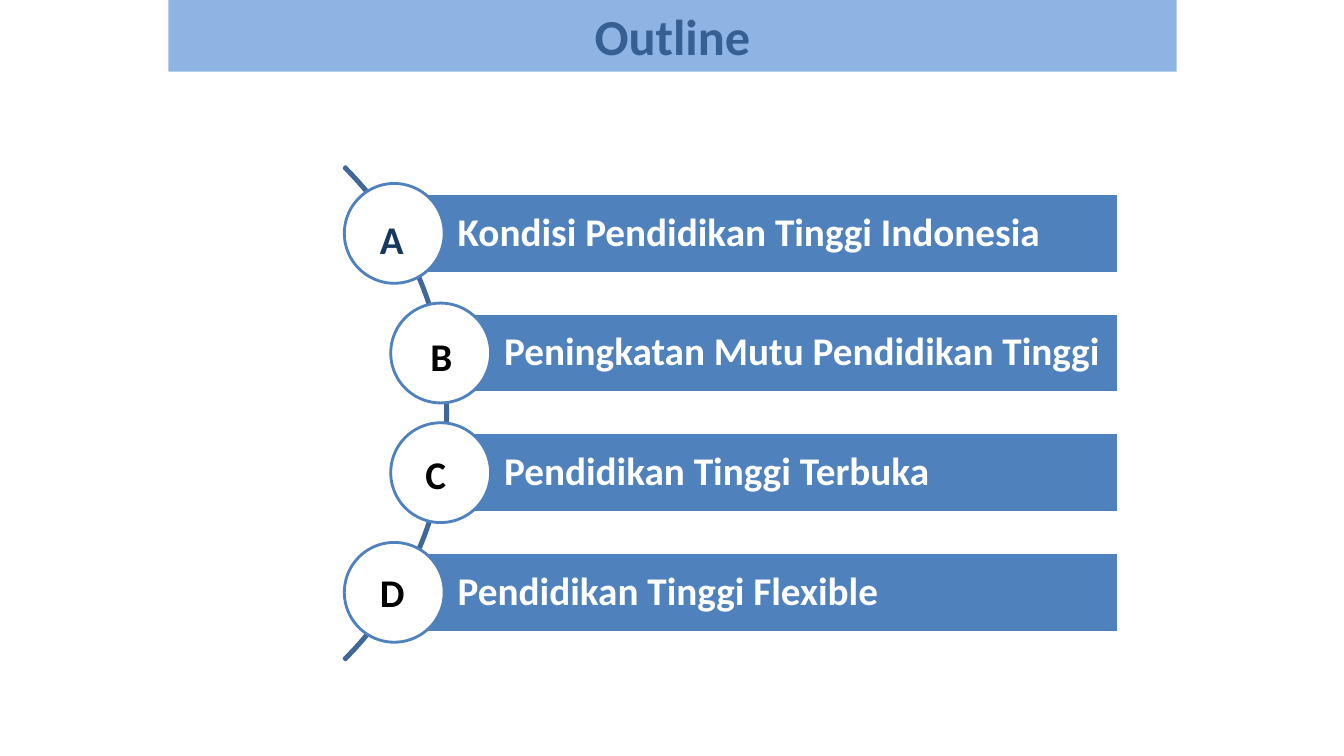
from pptx import Presentation
from pptx.dml.color import RGBColor
from pptx.enum.shapes import MSO_SHAPE as Preset
from pptx.enum.text import MSO_ANCHOR as Anchor, PP_ALIGN as Align
from pptx.util import Inches, Pt

COLORS = {
    "white": "FFFFFF",
    "black": "000000",
    "bar": "4F81BD",
    "arc": "3F6797",
    "banner": "8EB4E3",
    "title": "376092",
    "navy": "17375E",
}

# Letter, letter colour, letter left, letter top, bar left, topic
TOPICS = [
    ("A", "navy", 3.67, 2.09, 3.91, "Kondisi Pendidikan Tinggi Indonesia"),
    ("B", "black", 4.17, 3.25, 4.37, "Peningkatan Mutu Pendidikan Tinggi"),
    ("C", "black", 4.12, 4.42, 4.37, "Pendidikan Tinggi Terbuka"),
    ("D", "black", 3.67, 5.59, 3.91, "Pendidikan Tinggi Flexible"),
]
BAR_TOP, BAR_STEP, BAR_HEIGHT, BAR_RIGHT = 1.92, 1.187, 0.79, 11.09
CIRCLE_SIZE = 0.99


def color(name):
    return RGBColor.from_string(COLORS[name])


def add_preset(slide, preset, box, fill=None, line=None):
    shape = slide.shapes.add_shape(preset, *map(Inches, box))
    shape.shadow.inherit = False
    if fill:
        shape.fill.solid()
        shape.fill.fore_color.rgb = color(fill)
    else:
        shape.fill.background()
    if line:
        shape.line.color.rgb = color(line)
        shape.line.width = Pt(2)
    else:
        shape.line.fill.background()
    return shape


def write(shape, text, size, font_color, align=Align.LEFT, spacing=None, **frame_format):
    frame = shape.text_frame
    for name, value in {"word_wrap": True, **frame_format}.items():
        setattr(frame, name, value)
    paragraph = frame.paragraphs[0]
    paragraph.alignment = align
    paragraph.line_spacing = spacing
    run = paragraph.add_run()
    run.text = text
    font_format = {"name": "Calibri", "size": Pt(size), "bold": True}
    for name, value in font_format.items():
        setattr(run.font, name, value)
    run.font.color.rgb = color(font_color)


def add_arc(slide):
    arc = add_preset(slide, Preset.BLOCK_ARC, (-2.48, 0.64, 6.92, 6.92), line="arc")
    for index, value in enumerate((189, 27, 0.003)):
        arc.adjustments[index] = value


def add_bar(slide, left, top, topic):
    box = (left, top, BAR_RIGHT - left, BAR_HEIGHT)
    bar = add_preset(slide, Preset.RECTANGLE, box, "bar", "white")
    write(bar, topic, 28, "white", spacing=0.9, vertical_anchor=Anchor.MIDDLE,
          margin_left=Inches(0.63), margin_right=Inches(0.08),
          margin_top=Inches(0.08), margin_bottom=Inches(0.08))


def add_circle(slide, left, top):
    # Each circle is centred on the left edge of its bar
    box = (left - CIRCLE_SIZE / 2, top + (BAR_HEIGHT - CIRCLE_SIZE) / 2,
           CIRCLE_SIZE, CIRCLE_SIZE)
    add_preset(slide, Preset.OVAL, box, "white", "bar")


def add_letter(slide, letter, font_color, left, top):
    box = slide.shapes.add_textbox(*map(Inches, (left, top, 0.55, 0.57)))
    write(box, letter, 28, font_color)


def add_banner(slide, title):
    banner = add_preset(slide, Preset.RECTANGLE, (1.67, 0, 10, 0.71), "banner")
    write(banner, title, 36, "title", Align.CENTER, vertical_anchor=Anchor.TOP)


def main():
    presentation = Presentation()
    presentation.slide_width = Inches(13.33)
    presentation.slide_height = Inches(7.5)
    slide = presentation.slides.add_slide(presentation.slide_layouts[6])

    # Title and curve behind the list
    add_banner(slide, "Outline")
    add_arc(slide)

    # Lettered topics
    for index, (letter, font_color, left, top, bar_left, topic) in enumerate(TOPICS):
        bar_top = BAR_TOP + index * BAR_STEP
        add_bar(slide, bar_left, bar_top, topic)
        add_circle(slide, bar_left, bar_top)
        add_letter(slide, letter, font_color, left, top)

    presentation.save("out.pptx")


if __name__ == "__main__":
    main()
